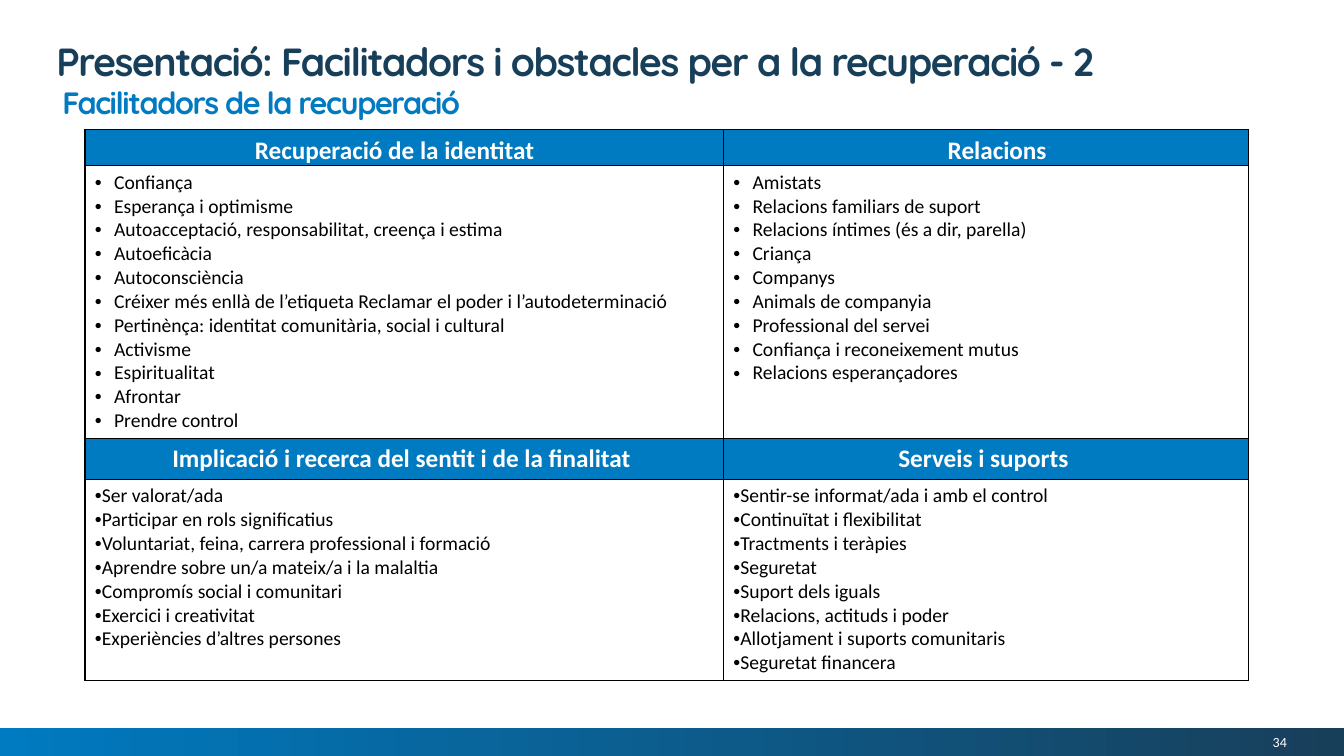
import dataclasses

import pptx
import pptx.dml.color
import pptx.enum.shapes
import pptx.enum.text
import pptx.oxml
import pptx.oxml.ns
import pptx.util
from pptx.util import Cm, Pt

ALIGN = pptx.enum.text.PP_ALIGN
ANCHOR = pptx.enum.text.MSO_ANCHOR


@dataclasses.dataclass(frozen=True)
class Theme:
    blue: str = "007AC0"
    navy: str = "183F5A"
    white: str = "FFFFFF"
    black: str = "000000"
    heading_font: str = "Quicksand"
    body_font: str = "Calibri"
    title_size: int = 28
    subtitle_size: int = 22
    header_size: int = 18
    list_size: int = 14
    number_size: int = 10


def rgb(value):
    return pptx.dml.color.RGBColor.from_string(value)


class SlideBuilder:
    def __init__(self, slide, theme):
        self.slide = slide
        self.theme = theme

    def format_para(self, para, font, size, color, bold=False, spacing=0):
        """Style every run; spacing is the letter spacing in points."""
        for span in para.runs:
            span.font.name = font
            span.font.size = Pt(size)
            span.font.bold = bold
            span.font.color.rgb = rgb(color)
            if spacing:
                span._r.get_or_add_rPr().set("spc", str(spacing * 100))

    def gradient_band(self, left, top, width, height, colors):
        band = self.slide.shapes.add_shape(
            pptx.enum.shapes.MSO_SHAPE.RECTANGLE, left, top, width, height)
        band.shadow.inherit = False
        band.line.fill.background()
        band.fill.gradient()
        band.fill.gradient_angle = 0
        for stop, color in zip(band.fill.gradient_stops, colors):
            stop.color.rgb = rgb(color)

    def text(self, content, left, top, width, height, margins=(0, 0),
             anchor=ANCHOR.TOP, align=ALIGN.LEFT, line=None, **style):
        box = self.slide.shapes.add_textbox(left, top, width, height)
        frame = box.text_frame
        frame.word_wrap = True
        frame.margin_left = frame.margin_right = margins[0]
        frame.margin_top = frame.margin_bottom = margins[1]
        frame.vertical_anchor = anchor
        frame.text = content
        para = frame.paragraphs[0]
        para.alignment = align
        para.line_spacing = line
        self.format_para(para, **style)

    def table(self, left, top, widths, heights):
        frame = self.slide.shapes.add_table(
            len(heights), len(widths), left, top, sum(widths), sum(heights))
        grid = frame.table
        grid.first_row = grid.horz_banding = False
        for column, width in zip(grid.columns, widths):
            column.width = width
        for row, height in zip(grid.rows, heights):
            row.height = height
        for cell in grid.iter_cells():
            self.cell_borders(cell)
        return grid

    def cell_borders(self, cell):
        properties = cell._tc.get_or_add_tcPr()
        for side in "LRTB":
            properties.append(pptx.oxml.parse_xml(
                f'<a:ln{side} {pptx.oxml.ns.nsdecls("a")} w="{Pt(1)}"><a:solidFill>'
                f'<a:srgbClr val="{self.theme.black}"/></a:solidFill></a:ln{side}>'))

    def header_cell(self, cell, content, margins, line=None):
        """Margins are left, top, right and bottom."""
        cell.fill.solid()
        cell.fill.fore_color.rgb = rgb(self.theme.blue)
        cell.margin_left, cell.margin_top, cell.margin_right, cell.margin_bottom = margins
        cell.text_frame.text = content
        para = cell.text_frame.paragraphs[0]
        para.alignment = ALIGN.CENTER
        para.line_spacing = line
        self.format_para(para, self.theme.body_font, self.theme.header_size,
                         self.theme.white, bold=True)

    def list_cell(self, cell, items, hanging):
        cell.fill.background()
        cell.text_frame.text = "\n".join(items)
        for para in cell.text_frame.paragraphs:
            properties = para._p.get_or_add_pPr()
            properties.set("marL", str(hanging))
            properties.set("indent", str(-hanging))
            for tag in ('buFont typeface="Arial"', 'buChar char="•"'):
                properties.append(pptx.oxml.parse_xml(
                    f'<a:{tag} {pptx.oxml.ns.nsdecls("a")}/>'))
            self.format_para(para, self.theme.body_font, self.theme.list_size,
                             self.theme.black)


IDENTITY = [
    "Confiança", "Esperança i optimisme",
    "Autoacceptació, responsabilitat, creença i estima",
    "Autoeficàcia", "Autoconsciència",
    "Créixer més enllà de l’etiqueta Reclamar el poder i l’autodeterminació",
    "Pertinènça: identitat comunitària, social i cultural",
    "Activisme", "Espiritualitat", "Afrontar", "Prendre control",
]
RELATIONS = [
    "Amistats", "Relacions familiars de suport",
    "Relacions íntimes (és a dir, parella)", "Criança", "Companys",
    "Animals de companyia", "Professional del servei",
    "Confiança i reconeixement mutus", "Relacions esperançadores",
]
MEANING = [
    "Ser valorat/ada", "Participar en rols significatius",
    "Voluntariat, feina, carrera professional i formació",
    "Aprendre sobre un/a mateix/a i la malaltia",
    "Compromís social i comunitari", "Exercici i creativitat",
    "Experiències d’altres persones",
]
SERVICES = [
    "Sentir-se informat/ada i amb el control", "Continuïtat i flexibilitat",
    "Tractments i teràpies", "Seguretat", "Suport dels iguals",
    "Relacions, actituds i poder", "Allotjament i suports comunitaris",
    "Seguretat financera",
]


def main():
    deck = pptx.Presentation()
    deck.slide_width, deck.slide_height = Cm(33.87), Cm(19.05)
    theme = Theme()
    page = SlideBuilder(deck.slides.add_slide(deck.slide_layouts[6]), theme)

    page.gradient_band(0, Cm(18.34), deck.slide_width, Cm(0.71),
                       (theme.blue, theme.navy))
    page.text("34", Cm(27.86), Cm(18.39), Cm(4.57), Cm(0.61),
              anchor=ANCHOR.MIDDLE, align=ALIGN.RIGHT, font=theme.body_font,
              size=theme.number_size, color=theme.white)
    page.text("Presentació: Facilitadors i obstacles per a la recuperació - 2",
              Cm(1.17), Cm(0.84), Cm(31.52), Cm(1.3), margins=(Cm(0.25), Cm(0.13)),
              line=Pt(33), font=theme.heading_font, size=theme.title_size,
              color=theme.navy, bold=True, spacing=-1)
    page.text("Facilitadors de la recuperació", Cm(1.57), Cm(2.06), Cm(31.04), Cm(0.99),
              anchor=ANCHOR.BOTTOM, line=Pt(33), font=theme.heading_font,
              size=theme.subtitle_size, color=theme.blue, bold=True, spacing=-1)

    grid = page.table(Cm(2.14), Cm(3.27), [Cm(16.09), Cm(13.24)],
                      [Cm(0.9), Cm(6.88), Cm(1.02), Cm(5.07)])
    top_row = {"line": 1.07}
    lower_margins = (Cm(0.25), Cm(0.13), Cm(0.38), Cm(0.13))
    sections = [
        (0, 0, "Recuperació de la identitat", IDENTITY, (0, Cm(0.08), Cm(0.48), 0)),
        (0, 1, "Relacions", RELATIONS, (Cm(0.76), Cm(0.08), Cm(0.2), 0)),
        (2, 0, "Implicació i recerca del sentit i de la finalitat", MEANING, lower_margins),
        (2, 1, "Serveis i suports", SERVICES, lower_margins),
    ]
    for row, column, heading, items, margins in sections:
        is_top = row == 0
        page.header_cell(grid.cell(row, column), heading, margins,
                         **(top_row if is_top else {}))
        page.list_cell(grid.cell(row + 1, column), items, Cm(0.48) if is_top else 0)

    deck.save("out.pptx")


if __name__ == "__main__":
    main()
